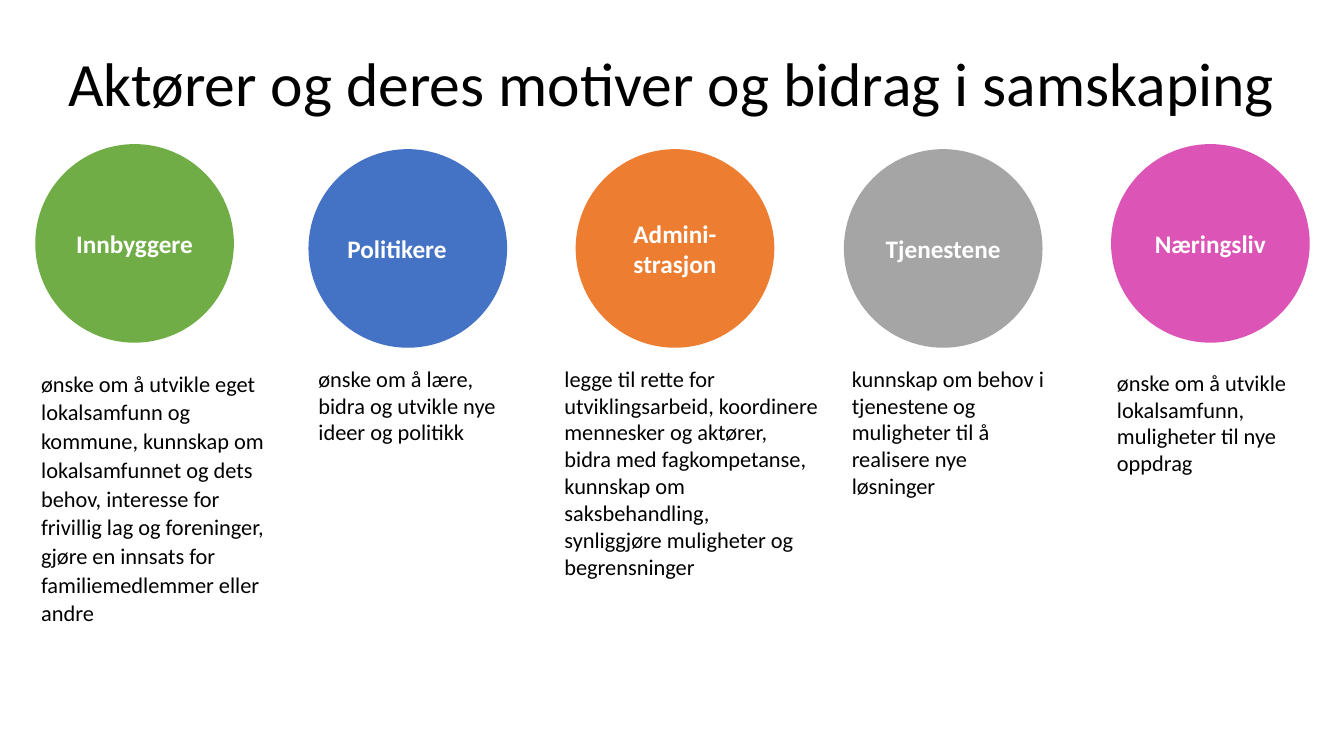
from pptx import Presentation
from pptx.dml.color import RGBColor
from pptx.enum.shapes import MSO_SHAPE as Shape
from pptx.enum.text import MSO_ANCHOR as Anchor, MSO_AUTO_SIZE as Fit, PP_ALIGN as Align
from pptx.util import Inches, Pt

FONT = "Calibri"
BLACK = RGBColor(0x00, 0x00, 0x00)
WHITE = RGBColor(0xFF, 0xFF, 0xFF)
GREEN = RGBColor(0x70, 0xAD, 0x47)
BLUE = RGBColor(0x44, 0x72, 0xC4)
ORANGE = RGBColor(0xED, 0x7D, 0x31)
GREY = RGBColor(0xA5, 0xA5, 0xA5)
PINK = RGBColor(0xDC, 0x54, 0xB5)

SIZE = 1.97

# name, colour, alignment, circle (left, top), text box (left, top, width, height),
# paragraphs, paragraph format
ACTORS = [
    ("Innbyggere", GREEN, Align.CENTER, (0.35, 1.43), (0.31, 3.6, 2.44, 3.08),
     ["ønske om å utvikle eget lokalsamfunn og kommune, kunnskap om "
      "lokalsamfunnet og dets behov, interesse for frivillig lag og foreninger, "
      "gjøre en innsats for familiemedlemmer eller andre"],
     {"line": 1.07, "after": 8}),
    ("Politikere", BLUE, Align.LEFT, (3.06, 1.48), (3.06, 3.57, 1.97, 1.18),
     ["ønske om å lære, bidra og utvikle nye ideer og politikk"], {}),
    ("Admini-strasjon", ORANGE, Align.CENTER, (5.71, 1.48), (5.5, 3.57, 2.73, 2.52),
     ["legge til rette for utviklingsarbeid, koordinere mennesker og aktører, \v"
      "bidra med fagkompetanse, kunnskap om saksbehandling,",
      "synliggjøre muligheter og begrensninger"], {}),
    ("Tjenestene", GREY, Align.CENTER, (8.37, 1.48), (8.35, 3.57, 2.17, 1.72),
     ["kunnskap om behov i tjenestene og muligheter til å realisere nye løsninger"], {}),
    ("Næringsliv", PINK, Align.CENTER, (11.02, 1.43), (10.98, 3.61, 2.35, 1.45),
     ["ønske om å utvikle lokalsamfunn, muligheter til nye oppdrag"], {}),
]


def write(frame, texts, size=16, color=BLACK, bold=False, align=Align.LEFT,
          anchor=Anchor.TOP, line=1.0, after=0):
    """Fill a text frame with one paragraph for each text."""
    frame.word_wrap = True
    frame.vertical_anchor = anchor
    for i, text in enumerate(texts):
        para = frame.paragraphs[0] if i == 0 else frame.add_paragraph()
        para.text = text
        para.alignment = align
        para.line_spacing = line
        para.space_after = Pt(after)
        for run in para.runs:
            font = run.font
            font.name, font.size, font.bold = FONT, Pt(size), bold
            font.color.rgb = color


def add_title(slide, text):
    title = slide.shapes.title
    title.left, title.top = Inches(0), Inches(0.13)
    title.width, title.height = Inches(13.33), Inches(1.45)
    write(title.text_frame, [text], size=44, align=Align.CENTER,
          anchor=Anchor.MIDDLE, line=0.9)
    title.text_frame.auto_size = Fit.NONE


def add_circle(slide, name, color, align, spot):
    left, top = spot
    circle = slide.shapes.add_shape(Shape.OVAL, Inches(left), Inches(top),
                                    Inches(SIZE), Inches(SIZE))
    circle.shadow.inherit = False
    circle.fill.solid()
    circle.fill.fore_color.rgb = color
    circle.line.fill.background()
    write(circle.text_frame, [name], size=18, color=WHITE, bold=True,
          align=align, anchor=Anchor.MIDDLE)


def add_note(slide, box, texts, style):
    note = slide.shapes.add_textbox(*map(Inches, box))
    write(note.text_frame, texts, **style)
    note.text_frame.auto_size = Fit.SHAPE_TO_FIT_TEXT


def main():
    deck = Presentation()
    deck.slide_width, deck.slide_height = Inches(13.33), Inches(7.5)
    slide = deck.slides.add_slide(deck.slide_layouts.get_by_name("Title Only"))
    add_title(slide, "Aktører og deres motiver og bidrag i samskaping")
    for name, color, align, spot, box, texts, style in ACTORS:
        add_circle(slide, name, color, align, spot)
        add_note(slide, box, texts, style)
    deck.save("out.pptx")


if __name__ == "__main__":
    main()
